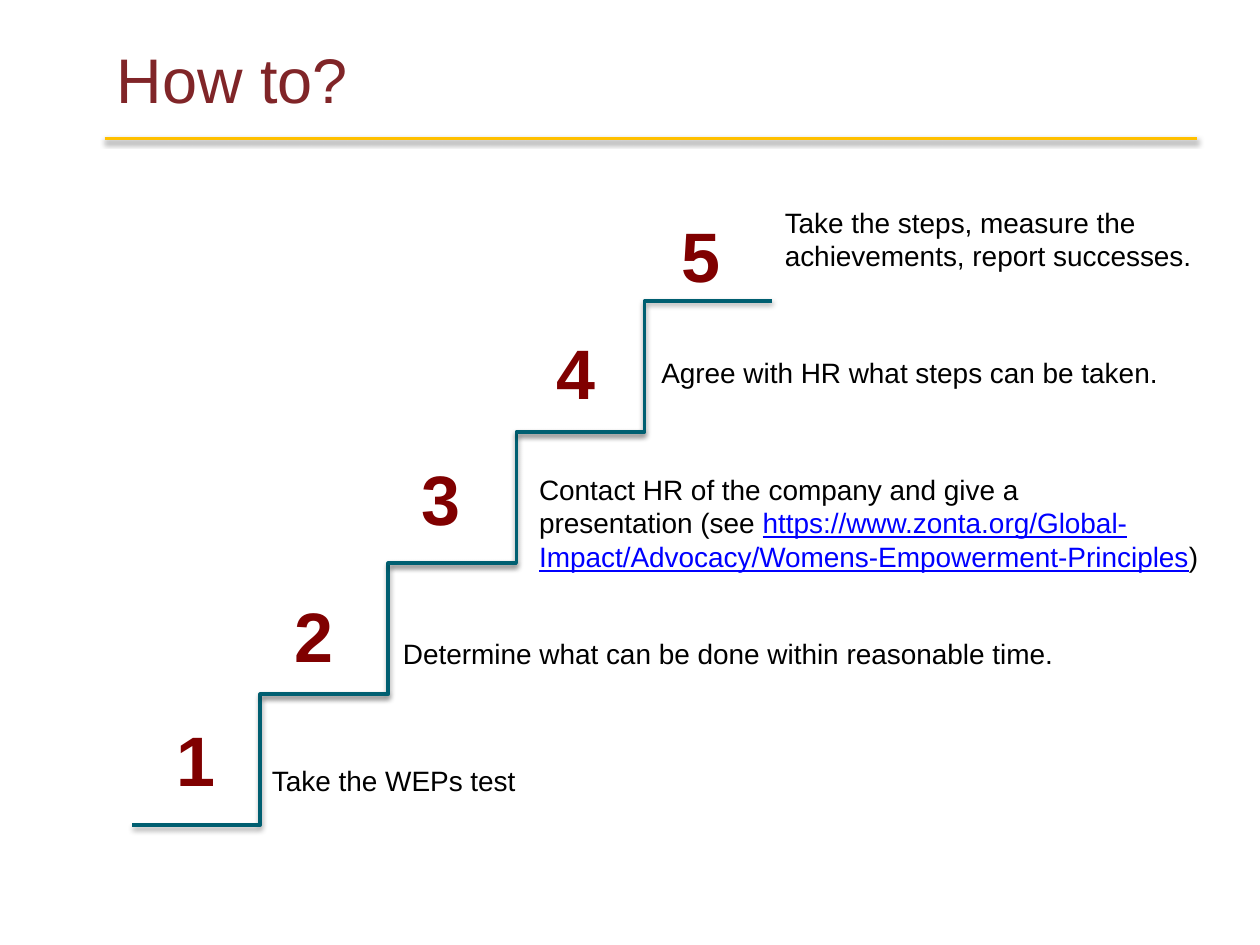
import pptx
import pptx.util
import pptx.dml.color
import pptx.enum.shapes
import pptx.enum.text
import pptx.oxml
import pptx.oxml.ns
from pptx.util import Inches

LINE = pptx.enum.shapes.MSO_CONNECTOR
TEXT = pptx.enum.text
SHADOW = (
    f'<a:effectLst {pptx.oxml.ns.nsdecls("a")}>'
    '<a:outerShdw blurRad="40000" dist="20000" dir="5400000" rotWithShape="0">'
    '<a:srgbClr val="000000"><a:alpha val="38000"/></a:srgbClr>'
    '</a:outerShdw></a:effectLst>'
)


def color(value):
    return pptx.dml.color.RGBColor.from_string(value)


def write(shape, lines, size, hue, bold=False, wrap=True, anchor=TEXT.MSO_ANCHOR.TOP):
    """Each line is a list of runs; a run that is a web address is shown as a link."""
    frame = shape.text_frame
    frame.word_wrap = wrap
    frame.vertical_anchor = anchor
    paragraph = frame.paragraphs[0]
    paragraph.alignment = TEXT.PP_ALIGN.LEFT
    for number, line in enumerate(lines):
        if number:
            paragraph.add_line_break()
        for words in line:
            run = paragraph.add_run()
            run.text = words
            is_address = words.startswith("https://")
            run.font.name = "Arial"
            run.font.size = pptx.util.Pt(size)
            run.font.bold = bold
            run.font.underline = is_address
            run.font.color.rgb = color("0000FF" if is_address else hue)


prs = pptx.Presentation()
prs.slide_width, prs.slide_height = Inches(10), Inches(7.5)
slide = prs.slides.add_slide(prs.slide_layouts[6])

# Title
title = slide.shapes.add_textbox(*map(Inches, (0.83, 0.3, 8.67, 0.65)))
write(title, [["How to?"]], 36, "802528", anchor=TEXT.MSO_ANCHOR.MIDDLE)

# Step descriptions on white panels
descriptions = [
    ((2.06, 6.01, 4.51, 0.37), [["Take the WEPs test"]]),
    ((3.1, 5, 6.06, 0.37), [["Determine what can be done within reasonable time."]]),
    ((4.18, 3.7, 5.58, 1.21), [
        ["Contact HR of the company and give a "],
        ["presentation (see ",
         "https://www.zonta.org/Global-Impact/Advocacy/Womens-Empowerment-Principles",
         ")"],
    ]),
    ((5.15, 2.77, 4.17, 0.37), [["Agree with HR what steps can be taken."]]),
    ((6.13, 1.58, 3.48, 0.64),
     [["Take the steps, measure the achievements, report successes."]]),
]
for box, lines in descriptions:
    panel = slide.shapes.add_shape(
        pptx.enum.shapes.MSO_SHAPE.RECTANGLE, *map(Inches, box))
    panel.shadow.inherit = False
    panel.fill.solid()
    panel.fill.fore_color.rgb = color("FFFFFF")
    panel.line.fill.background()
    write(panel, lines, 16, "000000")

# Title rule and staircase: each stair starts above the middle of the one before
rules = [(LINE.STRAIGHT, 0.83, 1.1, 9.5, 1.1, "FFC000")]
for step in range(4):
    left, bottom = 1.05 + 3.05 / 3 * step, 6.55 - 1.04 * step
    rules.append((LINE.ELBOW, left, bottom, left + 2.03, bottom - 1.04, "005F71"))
for kind, x1, y1, x2, y2, hue in rules:
    rule = slide.shapes.add_connector(kind, *map(Inches, (x1, y1, x2, y2)))
    rule.line.color.rgb = color(hue)
    rule.line.width = pptx.util.Pt(2)
    rule._element.spPr.append(pptx.oxml.parse_xml(SHADOW))

# Step numbers
number_places = [(1.3, 5.64), (2.24, 4.65), (3.25, 3.57), (4.32, 2.57), (5.31, 1.64)]
for number, (left, top) in enumerate(number_places, 1):
    label = slide.shapes.add_textbox(*map(Inches, (left, top, 0.51, 0.77)))
    write(label, [[str(number)]], 40, "800000", bold=True, wrap=False)

prs.save("out.pptx")
